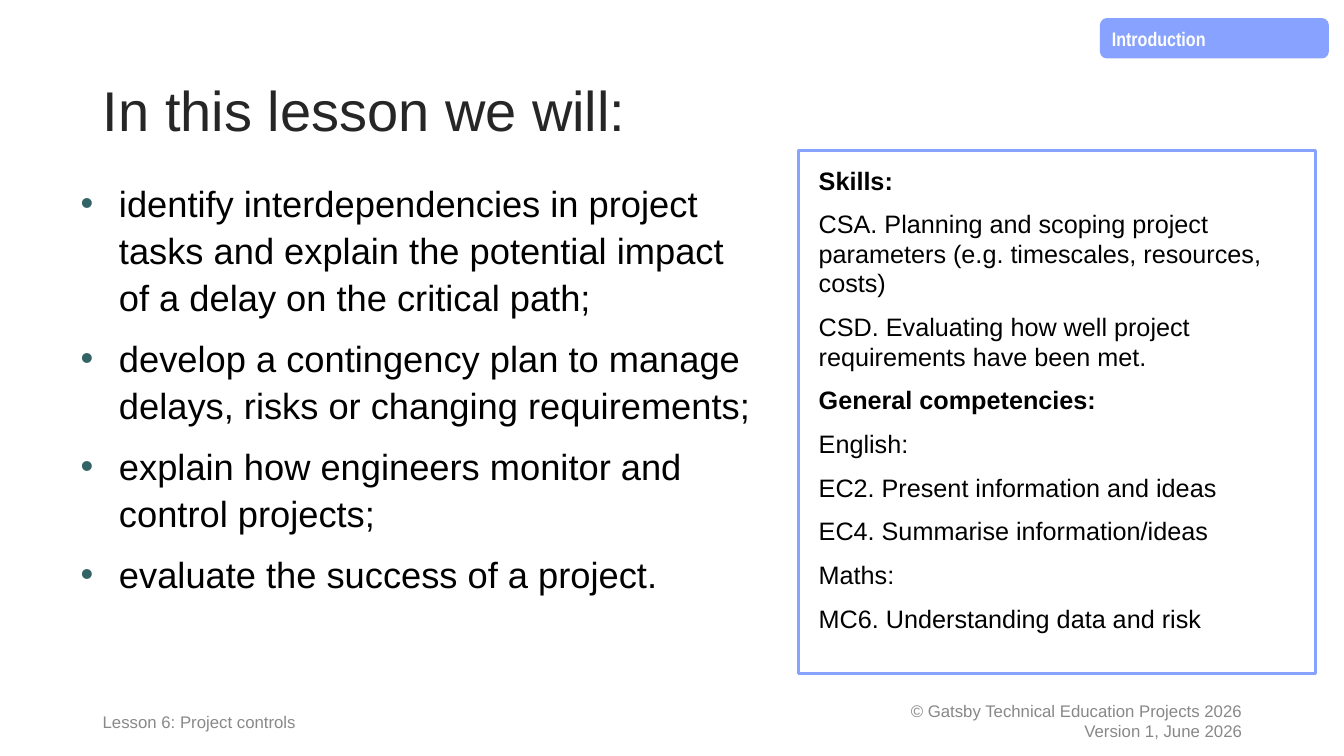
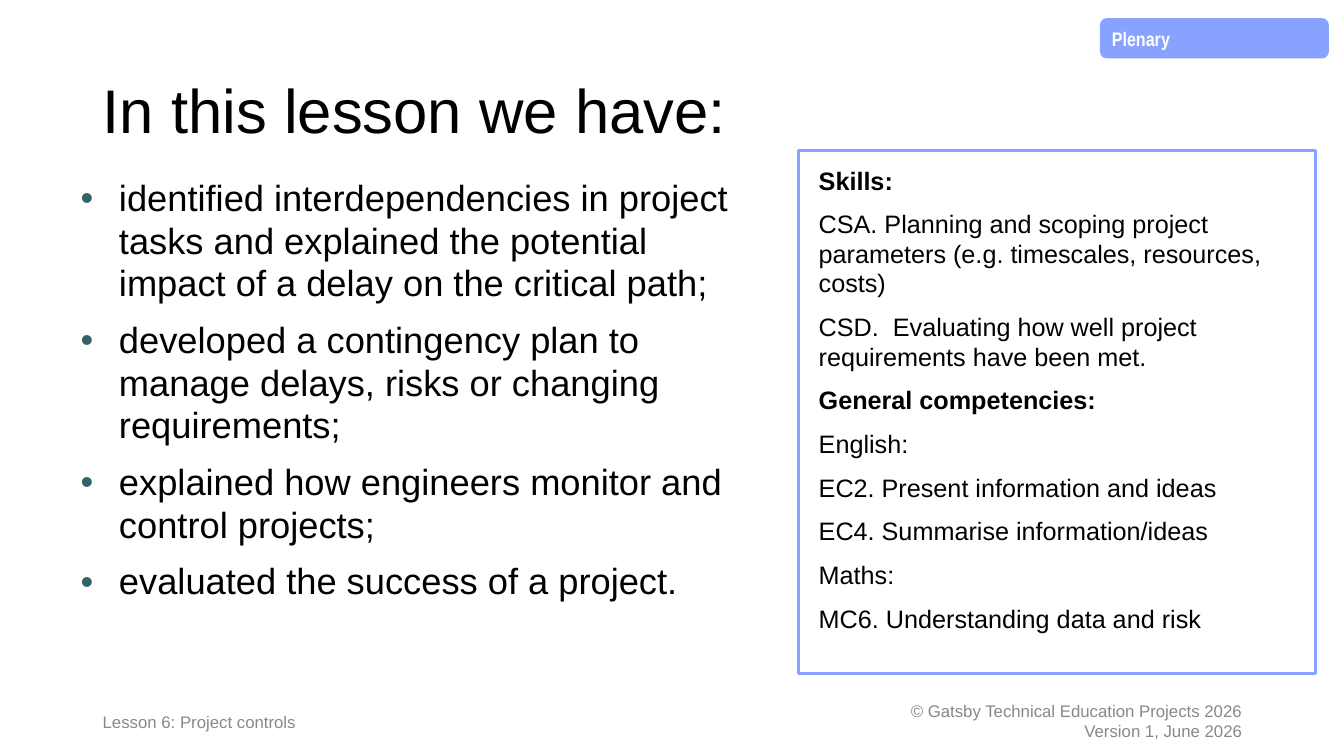
from lxml import etree
from pptx import Presentation
from pptx.dml.color import RGBColor
from pptx.enum.shapes import MSO_SHAPE as Shape
from pptx.enum.text import MSO_ANCHOR as Anchor, MSO_AUTO_SIZE as AutoSize, PP_ALIGN as Align
from pptx.oxml.ns import qn
from pptx.util import Inches, Pt

BLACK = RGBColor(0x00, 0x00, 0x00)
CHARCOAL = RGBColor(0x26, 0x26, 0x26)
WHITE = RGBColor(0xFF, 0xFF, 0xFF)
PERIWINKLE = RGBColor(0x88, 0xA2, 0xFF)
TEAL = RGBColor(0x32, 0x63, 0x67)
LESSON_GREY = RGBColor(0x89, 0x89, 0x89)
COPYRIGHT_GREY = RGBColor(0x88, 0x88, 0x88)

LESSON = ["Lesson 6: Project controls"]
COPYRIGHT = ["© Gatsby Technical Education Projects 2026", "Version 1, June 2026"]
HEADINGS = ("Skills:", "General competencies:")
COMPETENCIES = [
    "General competencies:",
    "English:",
    "EC2. Present information and ideas",
    "EC4. Summarise information/ideas",
    "Maths:",
    "MC6. Understanding data and risk",
]
SKILLS = [
    "Skills:",
    "CSA. Planning and scoping project parameters (e.g. timescales, resources, costs)",
]

PAGES = [
    {
        "tag": "Introduction",
        "title": "In this lesson we will:",
        "title_font": {"size": Pt(40), "color": CHARCOAL},
        "goal_spacing": 1.08,
        "goals": [
            "identify interdependencies in project tasks and explain the potential "
            "impact of a delay on the critical path;",
            "develop a contingency plan to manage delays, risks or changing requirements;",
            "explain how engineers monitor and control projects;",
            "evaluate the success of a project.",
        ],
        "evaluating": "CSD. Evaluating how well project requirements have been met.",
    },
    {
        "tag": "Plenary",
        "title": "In this lesson we have:",
        "title_font": {"size": Pt(44), "color": BLACK},
        "goal_spacing": 0.98,
        "goals": [
            "identified interdependencies in project tasks and explained the potential "
            "impact of a delay on the critical path;",
            "developed a contingency plan to manage delays, risks or changing requirements;",
            "explained how engineers monitor and control projects;",
            "evaluated the success of a project.",
        ],
        "evaluating": "CSD.  Evaluating how well project requirements have been met.",
    },
]

# Left, top, width, height in inches
TITLE_AREA = (0.92, 0.4, 11.5, 1.45)
GOALS_AREA = (0.58, 1.71, 7, 4.76)
PANEL_AREA = (7.92, 1.49, 5.13, 5.19)
LESSON_AREA = (0.92, 6.95, 4.6, 0.4)
COPYRIGHT_AREA = (7.92, 6.95, 4.5, 0.4)
TAG_AREA = (10.91, 0.18, 2.27, 0.4)

GOALS_FONT = {"size": Pt(25.9), "color": BLACK}
PANEL_FONT = {"size": Pt(18), "color": BLACK}
LESSON_FONT = {"size": Pt(12), "color": LESSON_GREY}
COPYRIGHT_FONT = {"size": Pt(12), "color": COPYRIGHT_GREY}
TAG_FONT = {"size": Pt(14), "color": WHITE, "name": "Arial Narrow", "bold": True}


def place(box, area):
    box.left, box.top, box.width, box.height = map(Inches, area)


def set_bullet(para, color=None):
    """Give the paragraph a hanging bullet, or none when no colour is given."""
    props = para._p.get_or_add_pPr()
    left, indent = (0.5, -0.38) if color else (0, 0)
    props.set("marL", str(Inches(left)))
    props.set("indent", str(Inches(indent)))
    if color is None:
        etree.SubElement(props, qn("a:buNone"))
        return
    tint = etree.SubElement(props, qn("a:buClr"))
    etree.SubElement(tint, qn("a:srgbClr"), val=str(color))
    etree.SubElement(props, qn("a:buFont"), typeface="Arial")
    etree.SubElement(props, qn("a:buChar"), char="•")


def format_font(font, values):
    for name, value in {"name": "Arial", "bold": False, **values}.items():
        if name == "color":
            font.color.rgb = value
        else:
            setattr(font, name, value)


def write(box, lines, font, spacing=1.08, gap=0, align=Align.LEFT,
          anchor=Anchor.TOP, inset=(0.1, 0.05), bullet=None):
    frame = box.text_frame
    across, down = map(Inches, inset)
    frame_format = {
        "word_wrap": True, "auto_size": AutoSize.NONE, "vertical_anchor": anchor,
        "margin_left": across, "margin_right": across,
        "margin_top": down, "margin_bottom": down,
    }
    for name, value in frame_format.items():
        setattr(frame, name, value)
    for number, line in enumerate(lines):
        para = frame.add_paragraph() if number else frame.paragraphs[0]
        set_bullet(para, bullet)
        para.alignment = align
        para.line_spacing = spacing
        para.space_before = Pt(gap if number else 0)
        span = para.add_run()
        span.text = line
        bold = {"bold": True} if line in HEADINGS else {}
        format_font(span.font, {**font, **bold})


def add_tag(page, label):
    tag = page.shapes.add_shape(Shape.FLOWCHART_ALTERNATE_PROCESS, *map(Inches, TAG_AREA))
    tag.shadow.inherit = False
    tag.fill.solid()
    tag.fill.fore_color.rgb = PERIWINKLE
    tag.line.fill.background()
    write(tag, [label], TAG_FONT)


def add_footers(page):
    for area, lines, font, spacing, align in (
        (LESSON_AREA, LESSON, LESSON_FONT, 1.08, Align.LEFT),
        (COPYRIGHT_AREA, COPYRIGHT, COPYRIGHT_FONT, 1.0, Align.RIGHT),
    ):
        box = page.shapes.add_textbox(*map(Inches, area))
        write(box, lines, font, spacing, align=align, anchor=Anchor.MIDDLE)


def add_page(deck, content):
    page = deck.slides.add_slide(deck.slide_layouts.get_by_name("Two Content"))
    title, goals, panel = page.placeholders

    place(title, TITLE_AREA)
    write(title, [content["title"]], content["title_font"], 0.9, anchor=Anchor.MIDDLE)

    place(goals, GOALS_AREA)
    write(goals, content["goals"], GOALS_FONT, content["goal_spacing"], gap=10, bullet=TEAL)

    place(panel, PANEL_AREA)
    panel.fill.solid()
    panel.fill.fore_color.rgb = WHITE
    panel.line.color.rgb = PERIWINKLE
    panel.line.width = Pt(2.25)
    write(panel, SKILLS + [content["evaluating"]] + COMPETENCIES, PANEL_FONT,
          0.98, gap=10, inset=(0.2, 0.16))

    add_footers(page)
    add_tag(page, content["tag"])


def main():
    deck = Presentation()
    deck.slide_width, deck.slide_height = Inches(13.33), Inches(7.5)
    for content in PAGES:
        add_page(deck, content)
    deck.save("out.pptx")


if __name__ == "__main__":
    main()
